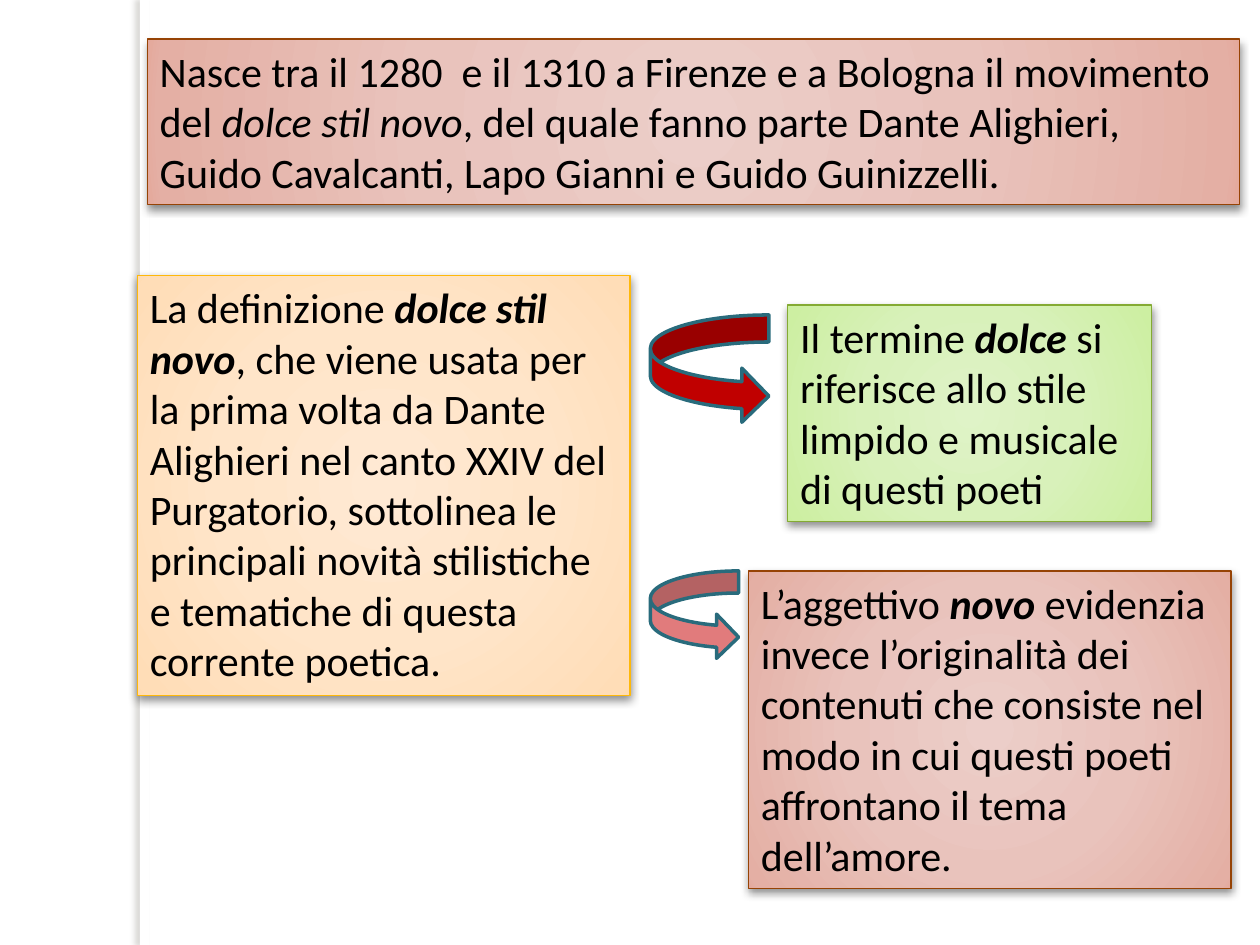
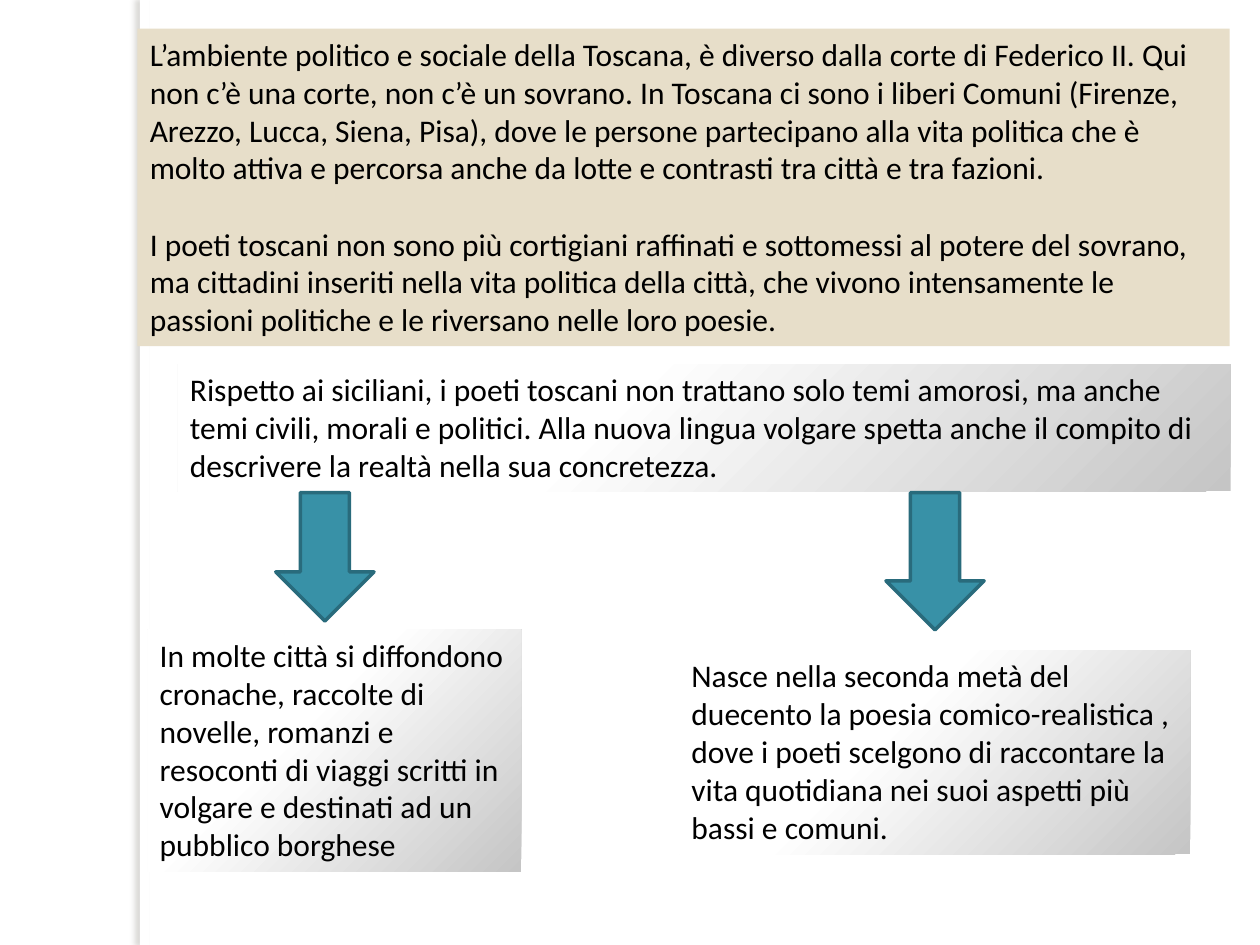
import pptx
import pptx.dml.color
import pptx.enum.shapes
import pptx.enum.text
import pptx.oxml
import pptx.oxml.ns
import pptx.util

Cm, Pt = pptx.util.Cm, pptx.util.Pt
MSO_SHAPE = pptx.enum.shapes.MSO_SHAPE

FONT = "Calibri"
BLACK, WHITE, BEIGE = "000000", "FFFFFF", "E7DEC9"
TEAL, TEAL_DARK, RED, PINK = "3891A7", "296B7C", "C00000", "E17B7C"

CENTRE = (50, 50, 50, 50)
CORNER = (-24, -20, 124, 120)
ROSE = [(0, "ECCEC9"), (50, "E9C3BC"), (97, "E4AFA4"), (100, "E4A89B")]
PEACH = [(0, "FFE9D3"), (50, "FFE5C9"), (97, "FFDDB7"), (100, "FFDBB2")]
GREEN = [(0, "DFF3C7"), (50, "D8F1BA"), (97, "CDEFA2"), (100, "CAF199")]
GREY = [(0, WHITE), (40, WHITE), (100, "C5C5C5")]


def rgb(color):
    return pptx.dml.color.RGBColor.from_string(color)


def place(box):
    return [Cm(v) for v in box]


def paint(sp, fill, line=None, width=0.75):
    sp.fill.solid()
    sp.fill.fore_color.rgb = rgb(fill)
    if line:
        sp.line.color.rgb = rgb(line)
        sp.line.width = Pt(width)
    else:
        sp.line.fill.background()


def set_gradient(sp, stops, focus):
    gs = "".join(
        f'<a:gs pos="{pos * 1000}"><a:srgbClr val="{color}"/></a:gs>'
        for pos, color in stops)
    l, t, r, b = (v * 1000 for v in focus)
    grad = pptx.oxml.parse_xml(
        f'<a:gradFill {pptx.oxml.ns.nsdecls("a")} rotWithShape="1">'
        f'<a:gsLst>{gs}</a:gsLst><a:path path="circle">'
        f'<a:fillToRect l="{l}" t="{t}" r="{r}" b="{b}"/></a:path></a:gradFill>')
    spPr = sp.element.spPr
    spPr.replace(spPr.find(pptx.oxml.ns.qn("a:solidFill")), grad)


def set_shadow(sp, color, alpha, blur, dist, angle):
    sp.shadow.inherit = False
    effects = sp.element.spPr.find(pptx.oxml.ns.qn("a:effectLst"))
    effects.append(pptx.oxml.parse_xml(
        f'<a:outerShdw {pptx.oxml.ns.nsdecls("a")} blurRad="{Pt(blur)}" '
        f'dist="{Pt(dist)}" dir="{angle * 60000}" algn="ctr" rotWithShape="0">'
        f'<a:srgbClr val="{color}"><a:alpha val="{alpha * 1000}"/></a:srgbClr>'
        f'</a:outerShdw>'))


def add_text(p, text, size=18, bold=False, italic=False, color=BLACK):
    for i, part in enumerate(text.split("*")):
        r = p.add_run()
        r.text = part
        f = r.font
        f.name, f.size, f.color.rgb = FONT, Pt(size), rgb(color)
        if i % 2:
            f.bold, f.italic = bold, italic


def add_box(s, box, paragraphs, fill=BEIGE, stops=None, focus=CENTRE,
            line=None, gap=0, **style):
    sp = s.shapes.add_textbox(*place(box))
    paint(sp, fill, line)
    if stops:
        set_gradient(sp, stops, focus)
    if line:
        set_shadow(sp, BLACK, 43, 5, 2, 90)
    tf = sp.text_frame
    tf.word_wrap = True
    tf.auto_size = pptx.enum.text.MSO_AUTO_SIZE.SHAPE_TO_FIT_TEXT
    for i, text in enumerate(paragraphs):
        p = tf.add_paragraph() if i else tf.paragraphs[0]
        if i:
            p.space_before = Pt(gap)
        add_text(p, text, **style)


def add_card(s, box, text, stops, line, bold=True):
    add_box(s, box, [text], stops=stops, line=line, size=24, bold=bold, italic=True)


def add_grey_box(s, box, text):
    add_box(s, box, [text], stops=GREY, focus=CORNER)


def add_arrow(s, kind, box, fill):
    sp = s.shapes.add_shape(kind, *place(box))
    paint(sp, fill, TEAL_DARK, 2)
    sp.shadow.inherit = False


def add_side_band(layout, s, height):
    sp = s.shapes.add_shape(MSO_SHAPE.RECTANGLE, Cm(2.82), 0, Cm(0.2), height)
    paint(sp, WHITE)
    set_shadow(sp, "736F63", 25, 3, 3, 180)
    layout.shapes.element.append(sp.element)


def build_definition(s):
    add_card(s, (2.97, 0.79, 22.02, 3.33),
             "Nasce tra il 1280  e il 1310 a Firenze e a Bologna il movimento del "
             "*dolce stil novo*, del quale fanno parte Dante Alighieri, Guido "
             "Cavalcanti, Lapo Gianni e Guido Guinizzelli.",
             ROSE, "964305", bold=False)
    add_card(s, (2.77, 5.56, 9.93, 8.46),
             "La definizione *dolce stil novo*, che viene usata per la prima volta "
             "da Dante Alighieri nel canto XXIV del Purgatorio, sottolinea le "
             "principali novità stilistiche e tematiche di questa corrente poetica.",
             PEACH, "FEB80A")
    add_card(s, (15.88, 6.15, 7.34, 4.37),
             "Il termine *dolce *si riferisce allo stile limpido e musicale di "
             "questi poeti", GREEN, "84AA33")
    add_card(s, (15.09, 11.51, 9.73, 6.4),
             "L’aggettivo *novo* evidenzia invece l’originalità dei contenuti che "
             "consiste nel modo in cui questi poeti affrontano il tema dell’amore.",
             ROSE, "964305")
    for box, fill in (((13.11, 6.35, 2.39, 2.18), RED),
                      ((13.11, 11.51, 1.78, 1.78), PINK)):
        add_arrow(s, MSO_SHAPE.CURVED_RIGHT_ARROW, box, fill)


def build_tuscany(s):
    add_grey_box(s, (3.58, 7.34, 21.23, 2.57),
                 "Rispetto ai siciliani, i poeti toscani non trattano solo temi "
                 "amorosi, ma anche temi civili, morali e politici. Alla nuova "
                 "lingua volgare spetta anche il compito di descrivere la realtà "
                 "nella sua concretezza.")
    for left, height in ((5.56, 2.59), (17.86, 2.77)):
        add_arrow(s, MSO_SHAPE.DOWN_ARROW, (left, 9.93, 1.98, height), TEAL)
    add_grey_box(s, (2.97, 12.7, 7.54, 4.88),
                 "In molte città si diffondono cronache, raccolte di novelle, "
                 "romanzi e resoconti di viaggi scritti in volgare e destinati ad "
                 "un pubblico borghese")
    add_grey_box(s, (13.69, 13.11, 10.31, 4.11),
                 "Nasce nella seconda metà del duecento la poesia comico-realistica "
                 ", dove i poeti scelgono di raccontare la vita quotidiana nei suoi "
                 "aspetti più bassi e comuni.")
    add_box(s, (2.77, 0.58, 22.02, 6.4), [
        "L’ambiente politico e sociale della Toscana, è diverso dalla corte di "
        "Federico II. Qui non c’è una corte, non c’è un sovrano. In Toscana ci sono "
        "i liberi Comuni (Firenze, Arezzo, Lucca, Siena, Pisa), dove le persone "
        "partecipano alla vita politica che è molto attiva e percorsa anche da "
        "lotte e contrasti tra città e tra fazioni.",
        "I poeti toscani non sono più cortigiani raffinati e sottomessi al potere "
        "del sovrano, ma cittadini inseriti nella vita politica della città, che "
        "vivono intensamente le passioni politiche e le riversano nelle loro poesie.",
    ], gap=22)


def main():
    prs = pptx.Presentation()
    prs.slide_width, prs.slide_height = Cm(25.4), Cm(19.05)
    layout = prs.slide_layouts[6]
    definition, tuscany = (prs.slides.add_slide(layout) for _ in range(2))
    add_side_band(layout, definition, prs.slide_height)
    build_definition(definition)
    build_tuscany(tuscany)
    prs.save("out.pptx")


if __name__ == "__main__":
    main()
